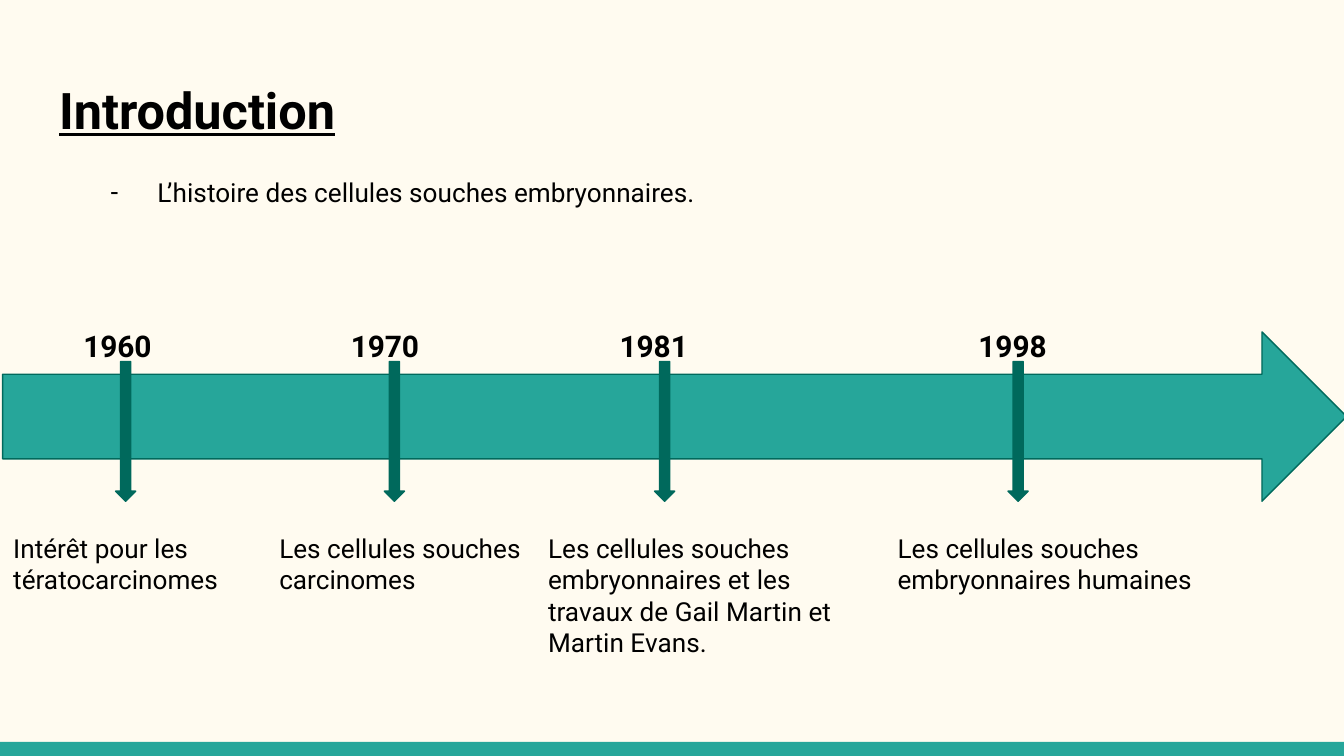
from lxml import etree
from pptx import Presentation
from pptx.dml.color import RGBColor
from pptx.enum.shapes import MSO_SHAPE
from pptx.enum.text import MSO_ANCHOR, MSO_AUTO_SIZE, PP_ALIGN
from pptx.oxml.ns import qn
from pptx.util import Inches, Pt

RECTANGLE = MSO_SHAPE.RECTANGLE
RIGHT_ARROW = MSO_SHAPE.RIGHT_ARROW
DOWN_ARROW = MSO_SHAPE.DOWN_ARROW
TOP = MSO_ANCHOR.TOP
NO_AUTOFIT = MSO_AUTO_SIZE.NONE
LEFT = PP_ALIGN.LEFT

COLORS = {"background": "FFFBF0", "teal": "26A69A", "dark": "00695C", "text": "000000"}
FONT = "Roboto"


def write(holder, text, box, size=14, bold=False, underline=False,
          inset=0.1, bullet=None, tabs=()):
    """Place a text holder and fill it with one formatted paragraph."""
    holder.left, holder.top, holder.width, holder.height = map(Inches, box)
    frame = holder.text_frame
    frame.word_wrap = True
    frame.auto_size = NO_AUTOFIT
    frame.vertical_anchor = TOP
    frame.margin_left = Inches(inset)
    frame.margin_right = frame.margin_top = frame.margin_bottom = Inches(0.1)
    paragraph = frame.paragraphs[0]
    paragraph.alignment = LEFT
    paragraph.space_before = Pt(0)
    properties = paragraph._p.get_or_add_pPr()
    if bullet:
        properties.set("marL", str(Inches(0.5)))
        properties.set("indent", str(Inches(-0.35)))
        etree.SubElement(properties, qn("a:buChar"), char=bullet)
    if tabs:
        tab_list = etree.SubElement(properties, qn("a:tabLst"))
        for stop in tabs:
            etree.SubElement(tab_list, qn("a:tab"), pos=str(Inches(stop)), algn="l")
    run = paragraph.add_run()
    run.text = text
    run.font.name = FONT
    run.font.size = Pt(size)
    run.font.bold = bold
    run.font.underline = underline
    run.font.color.rgb = RGBColor.from_string(COLORS["text"])


def draw(slide, kind, box, fill, line=None):
    """Add a flat preset shape with an optional thin outline."""
    shape = slide.shapes.add_shape(kind, *map(Inches, box))
    shape.shadow.inherit = False
    shape.fill.solid()
    shape.fill.fore_color.rgb = RGBColor.from_string(COLORS[fill])
    if line:
        shape.line.color.rgb = RGBColor.from_string(COLORS[line])
        shape.line.width = Pt(0.75)
    else:
        shape.line.fill.background()


# Widescreen 16:9 page
prs = Presentation()
prs.slide_width = Inches(10)
prs.slide_height = Inches(10 * 9 / 16)
slide = prs.slides.add_slide(prs.slide_layouts[1])
slide.background.fill.solid()
slide.background.fill.fore_color.rgb = RGBColor.from_string(COLORS["background"])

# Footer band
draw(slide, RECTANGLE, (0, 5.52, 10, 0.11), "teal")

# Title and subject
write(slide.shapes.title, "Introduction", (0.34, 0.49, 9.32, 0.67),
      size=27, bold=True, underline=True)
write(slide.placeholders[1], "L’histoire des cellules souches embryonnaires.",
      (0.57, 1.21, 6.1, 0.44), bullet="-")

# Timeline: year, marker left, description left and width, description height
events = [
    ("1960", 0.86, 0, 2.08, 0.67, "Intérêt pour les tératocarcinomes"),
    ("1970", 2.86, 1.98, 2, 0.67, "Les cellules souches carcinomes"),
    ("1981", 4.87, 3.98, 2.37, 1.14,
     "Les cellules souches embryonnaires et les travaux de Gail Martin et Martin Evans."),
    ("1998", 7.5, 6.58, 2.85, 0.67, "Les cellules souches embryonnaires humaines"),
]

# Years on one tabbed line
years = slide.shapes.add_textbox(0, 0, 0, 0)
write(years, "\t".join(event[0] for event in events), (0.02, 2.34, 10, 0.47),
      size=16, bold=True, inset=0.6, tabs=(1.99, 3.99, 6.66))

# Time arrow, then the marker and description of each event
draw(slide, RIGHT_ARROW, (0.02, 2.47, 10, 1.26), "teal", "dark")
for year, marker_left, left, width, height, description in events:
    draw(slide, DOWN_ARROW, (marker_left, 2.69, 0.15, 1.04), "dark", "dark")
    write(slide.shapes.add_textbox(0, 0, 0, 0), description, (left, 3.86, width, height))

prs.save("out.pptx")
